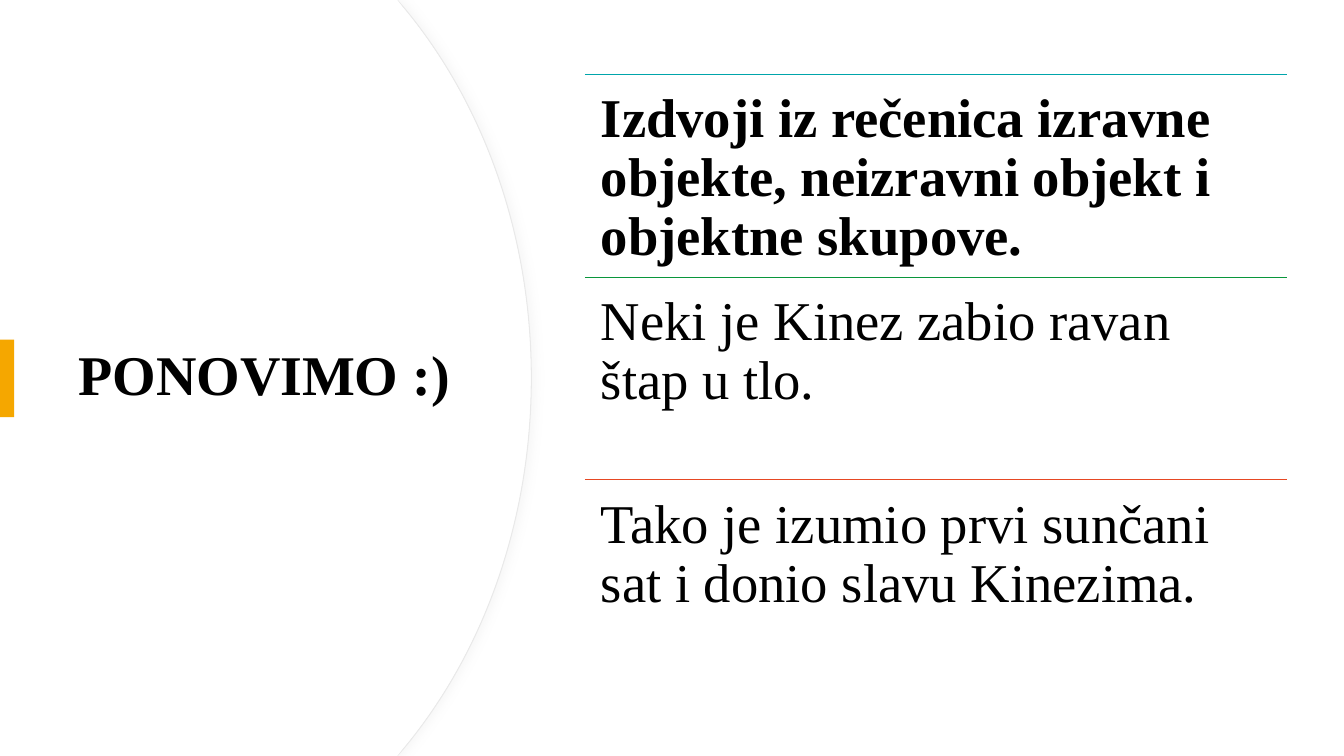
from dataclasses import dataclass

from lxml.etree import SubElement
from pptx import Presentation
from pptx.dml.color import RGBColor
from pptx.enum.shapes import MSO_CONNECTOR, MSO_SHAPE
from pptx.enum.text import MSO_ANCHOR
from pptx.oxml.ns import qn
from pptx.shapes.autoshape import Shape
from pptx.slide import Slide
from pptx.util import Emu, Pt

PX_PER_INCH = 100
SLIDE_WIDTH, SLIDE_HEIGHT = 1333, 750


@dataclass(frozen=True)
class Theme:
    font: str = "Times New Roman"
    title_size: int = 40
    body_size: int = 39
    rule_width: float = 1
    edge_width: float = 0.75
    line_spacing: float = 0.9
    ink: str = "000000"
    paper: str = "FFFFFF"
    edge: str = "E9E9E9"
    shade: str = "D9D9D9"
    shade_alpha: int = 20
    shade_blur: int = 6
    shade_distance: int = 3
    accent: str = "F5A700"


@dataclass(frozen=True)
class Box:
    left: int
    top: int
    width: int
    height: int

    def emu(self) -> tuple[Emu, Emu, Emu, Emu]:
        return px(self.left), px(self.top), px(self.width), px(self.height)


@dataclass(frozen=True)
class Task:
    sentence: str
    rule_color: str
    bold: bool = False


THEME = Theme()
TITLE_BOX = Box(68, 127, 394, 495)
MARKER_BOX = Box(0, 337, 14, 77)
FIRST_TASK_BOX = Box(580, 74, 696, 201)
TITLE_INSET, TASK_INSET = 10, 16
TASKS = (
    Task("Izdvoji iz rečenica izravne objekte, neizravni objekt i objektne skupove.", "00A5AB", True),
    Task("Neki je Kinez zabio ravan štap u tlo.", "09963B"),
    Task("Tako je izumio prvi sunčani sat i donio slavu Kinezima.", "E64823"),
)
PANEL_CORNER = (394, 0)
UPPER_ARC = ((401, 8), (479, 102), (527, 232), (527, 375))
FIRST_ARC_SEGMENT = 2


def px(length: int) -> Emu:
    return Emu(round(length * 914400 / PX_PER_INCH))


def color(code: str) -> RGBColor:
    return RGBColor.from_string(code)


def round_arcs(panel: Shape) -> None:
    segments = list(panel.element.iter(qn("a:lnTo")))
    for start in (FIRST_ARC_SEGMENT, FIRST_ARC_SEGMENT + 3):
        curve, *merged = segments[start:start + 3]
        curve.tag = qn("a:cubicBezTo")
        for segment in merged:
            curve.append(segment[0])
            segment.getparent().remove(segment)


def add_panel(slide: Slide, inset: int) -> Shape:
    upper = [PANEL_CORNER] + [(x - inset, y) for x, y in UPPER_ARC]
    lower = [(x, SLIDE_HEIGHT - y) for x, y in reversed(upper[:-1])]
    outline = [(px(x), px(y)) for x, y in upper + lower + [(0, SLIDE_HEIGHT)]]
    builder = slide.shapes.build_freeform(0, 0)
    builder.add_line_segments(outline, close=True)
    panel = builder.convert_to_shape()
    round_arcs(panel)
    panel.shadow.inherit = False
    panel.fill.solid()
    panel.fill.fore_color.rgb = color(THEME.paper)
    panel.line.fill.background()
    return panel


def add_edge(panel: Shape) -> None:
    panel.line.color.rgb = color(THEME.edge)
    panel.line.width = Pt(THEME.edge_width)
    effects = panel.element.spPr.find(qn("a:effectLst"))
    shadow = SubElement(effects, qn("a:outerShdw"), blurRad=str(Pt(THEME.shade_blur)),
                        dist=str(Pt(THEME.shade_distance)), dir="0", algn="l", rotWithShape="0")
    shade = SubElement(shadow, qn("a:srgbClr"), val=THEME.shade)
    SubElement(shade, qn("a:alpha"), val=str(THEME.shade_alpha * 1000))


def add_marker(slide: Slide, box: Box) -> None:
    marker = slide.shapes.add_shape(MSO_SHAPE.RECTANGLE, *box.emu())
    marker.shadow.inherit = False
    marker.fill.solid()
    marker.fill.fore_color.rgb = color(THEME.accent)
    marker.line.fill.background()


def add_text(slide: Slide, box: Box, text: str, size: int, bold: bool,
             inset: int, anchor: MSO_ANCHOR) -> None:
    frame = slide.shapes.add_textbox(*box.emu()).text_frame
    frame.word_wrap = True
    frame.vertical_anchor = anchor
    frame.margin_left = frame.margin_right = px(inset)
    frame.margin_top = frame.margin_bottom = px(inset)
    paragraph = frame.paragraphs[0]
    paragraph.text = text
    paragraph.line_spacing = THEME.line_spacing
    paragraph.font.name = THEME.font
    paragraph.font.size = Pt(size)
    paragraph.font.bold = bold
    paragraph.font.color.rgb = color(THEME.ink)


def add_rule(slide: Slide, box: Box, rule_color: str) -> None:
    left, top, width, _ = box.emu()
    rule = slide.shapes.add_connector(MSO_CONNECTOR.STRAIGHT, left, top, left + width, top)
    rule.line.color.rgb = color(rule_color)
    rule.line.width = Pt(THEME.rule_width)
    SubElement(rule.element.spPr, qn("a:effectLst"))


def add_task(slide: Slide, index: int, task: Task) -> None:
    first = FIRST_TASK_BOX
    box = Box(first.left, first.top + index * first.height, first.width, first.height)
    add_rule(slide, box, task.rule_color)
    add_text(slide, box, task.sentence, THEME.body_size, task.bold, TASK_INSET, MSO_ANCHOR.TOP)


def main() -> None:
    presentation = Presentation()
    presentation.slide_width = px(SLIDE_WIDTH)
    presentation.slide_height = px(SLIDE_HEIGHT)
    slide = presentation.slides.add_slide(presentation.slide_layouts[6])
    add_edge(add_panel(slide, inset=0))
    add_panel(slide, inset=1)
    add_text(slide, TITLE_BOX, "PONOVIMO :)", THEME.title_size, True,
             TITLE_INSET, MSO_ANCHOR.MIDDLE)
    add_marker(slide, MARKER_BOX)
    for index, task in enumerate(TASKS):
        add_task(slide, index, task)
    presentation.save("out.pptx")


if __name__ == "__main__":
    main()
